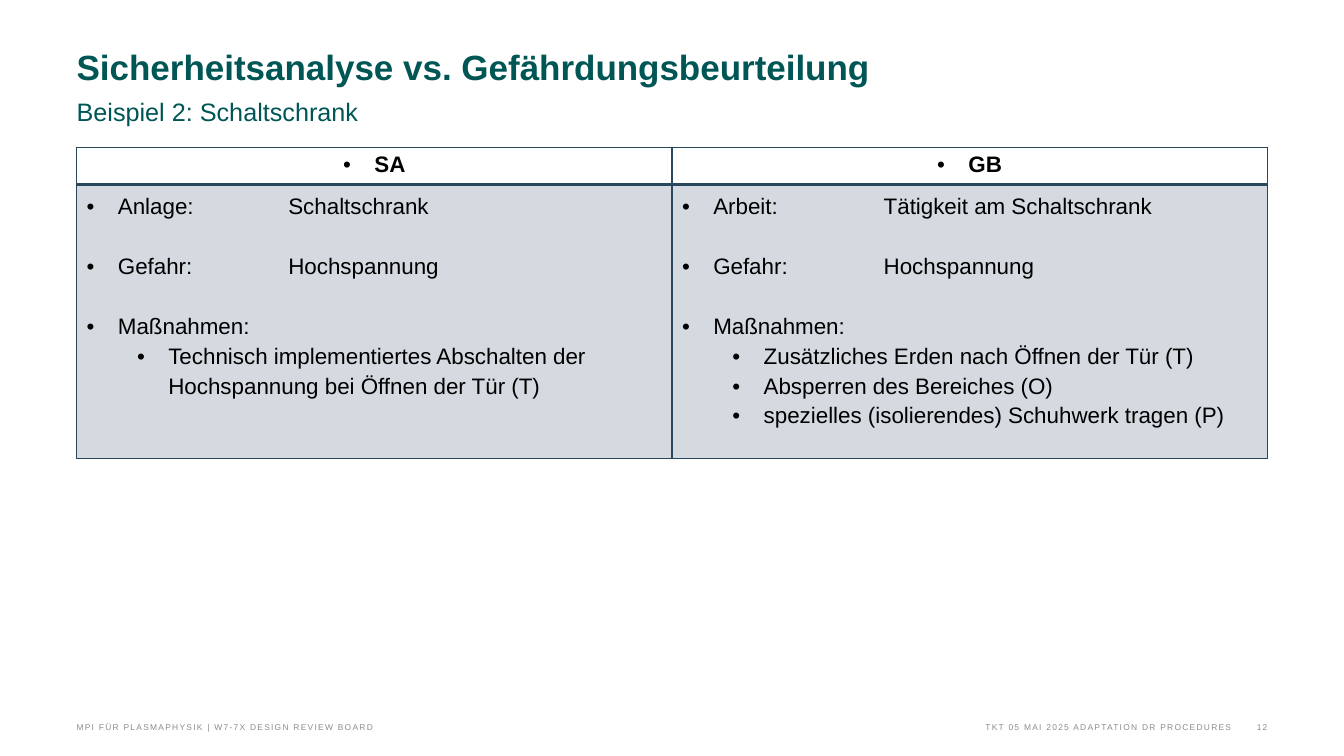
import pptx
import pptx.dml.color
import pptx.enum.text
import pptx.oxml.ns
import pptx.util
from lxml import etree
from pptx.util import Inches

GREEN = pptx.dml.color.RGBColor(0x00, 0x55, 0x55)
GRAY = pptx.dml.color.RGBColor(0x8C, 0x8C, 0x8C)
BLACK = pptx.dml.color.RGBColor(0x00, 0x00, 0x00)
NAVY = pptx.dml.color.RGBColor(0x29, 0x48, 0x5D)
PALE_NAVY = pptx.dml.color.RGBColor(0xD4, 0xDA, 0xDF)

ALIGN = pptx.enum.text.PP_ALIGN
LEFT_MARGIN = Inches(0.76)

COLUMNS = [
    ("SA", [("Anlage:", "Schaltschrank"), ("Gefahr:", "Hochspannung")],
     ["Technisch implementiertes Abschalten der Hochspannung bei Öffnen der Tür (T)"]),
    ("GB", [("Arbeit:", "Tätigkeit am Schaltschrank"), ("Gefahr:", "Hochspannung")],
     ["Zusätzliches Erden nach Öffnen der Tür (T)",
      "Absperren des Bereiches (O)",
      "spezielles (isolierendes) Schuhwerk tragen (P)"]),
]


def add_xml(parent, tag, **attributes):
    return etree.SubElement(parent, pptx.oxml.ns.qn(tag), attributes)


def set_font(font, size, color, bold=False):
    font.name = "Arial"
    font.size = pptx.util.Pt(size)
    font.bold = bold
    font.color.rgb = color


def clear_margins(frame):
    frame.margin_left = frame.margin_top = frame.margin_right = frame.margin_bottom = 0


def format_title(title):
    title.left, title.top = LEFT_MARGIN, Inches(0.48)
    title.width, title.height = Inches(10.47), Inches(0.98)
    frame = title.text_frame
    clear_margins(frame)
    frame.auto_size = pptx.enum.text.MSO_AUTO_SIZE.NONE
    frame.vertical_anchor = pptx.enum.text.MSO_ANCHOR.TOP
    para = frame.paragraphs[0]
    para.alignment = ALIGN.LEFT
    para.line_spacing = pptx.util.Pt(28)
    heading = para.add_run()
    heading.text = "Sicherheitsanalyse vs. Gefährdungsbeurteilung"
    set_font(heading.font, 25, GREEN, bold=True)
    para.add_line_break()
    subtitle = para.add_run()
    subtitle.text = "Beispiel 2: Schaltschrank"
    set_font(subtitle.font, 18, GREEN)


def add_footer(page, text, left, width, alignment):
    box = page.shapes.add_textbox(left, Inches(7.1), width, Inches(0.16))
    frame = box.text_frame
    clear_margins(frame)
    frame.word_wrap = True
    frame.vertical_anchor = pptx.enum.text.MSO_ANCHOR.BOTTOM
    para = frame.paragraphs[0]
    para.alignment = alignment
    span = para.add_run()
    span.text = text
    set_font(span.font, 6, GRAY)
    span.font._element.set("spc", "90")


def set_borders(cell, bottom_width):
    """Draw the four cell edges; they must precede the fill in the XML."""
    properties = cell._tc.get_or_add_tcPr()
    for side, width in (("L", 1), ("R", 1), ("T", 1), ("B", bottom_width)):
        edge = add_xml(properties, f"a:ln{side}", w=str(pptx.util.Pt(width)))
        fill = add_xml(edge, "a:solidFill")
        add_xml(fill, "a:srgbClr", val=str(NAVY))


def add_bullet(frame, text, level=0, space_before=0, bold=False):
    para = frame.paragraphs[0]
    if para.runs:
        para = frame.add_paragraph()
    para.text = text
    para.level = level
    para.space_before = pptx.util.Pt(space_before)
    properties = para._p.get_or_add_pPr()
    properties.set("marL", str(Inches(0.31 + 0.5 * level)))
    properties.set("indent", str(Inches(-0.31)))
    add_xml(properties, "a:buFont", typeface="Arial")
    add_xml(properties, "a:buChar", char="•")
    if "\t" in text:
        tabs = add_xml(properties, "a:tabLst")
        add_xml(tabs, "a:tab", pos=str(Inches(2)), algn="l")
    set_font(para.font, 16, BLACK, bold)
    return para


def fill_header(cell, text):
    set_borders(cell, bottom_width=2)
    cell.fill.background()
    add_bullet(cell.text_frame, text, bold=True).alignment = ALIGN.CENTER


def fill_body(cell, facts, measures):
    set_borders(cell, bottom_width=1)
    cell.fill.solid()
    cell.fill.fore_color.rgb = PALE_NAVY
    frame = cell.text_frame
    lines = ["\t".join(fact) for fact in facts] + ["Maßnahmen:"]
    for number, line in enumerate(lines):
        add_bullet(frame, line, space_before=21.5 if number else 0)
    for measure in measures:
        add_bullet(frame, measure, level=1)
    for para in frame.paragraphs:
        para.line_spacing = 1.2


def add_comparison(page):
    frame = page.shapes.add_table(
        2, len(COLUMNS), LEFT_MARGIN, Inches(1.46), Inches(11.81), Inches(3.09))
    table = frame.table
    table.first_row = table.horz_banding = False
    table.rows[0].height = Inches(0.37)
    table.rows[1].height = Inches(2.72)
    for number, (heading, facts, measures) in enumerate(COLUMNS):
        fill_header(table.cell(0, number), heading)
        fill_body(table.cell(1, number), facts, measures)


def main():
    deck = pptx.Presentation()
    deck.slide_width, deck.slide_height = Inches(13.33), Inches(7.5)
    page = deck.slides.add_slide(deck.slide_layouts.get_by_name("Title Only"))
    format_title(page.shapes.title)
    add_comparison(page)
    add_footer(page, "MPI FÜR PLASMAPHYSIK | W7-7X DESIGN REVIEW BOARD",
               LEFT_MARGIN, Inches(6.66), ALIGN.LEFT)
    add_footer(page, "TKT 05 MAI 2025 ADAPTATION DR PROCEDURES",
               Inches(4.51), Inches(7.7), ALIGN.RIGHT)
    add_footer(page, "12", Inches(12.21), Inches(0.36), ALIGN.RIGHT)
    deck.save("out.pptx")


if __name__ == "__main__":
    main()
